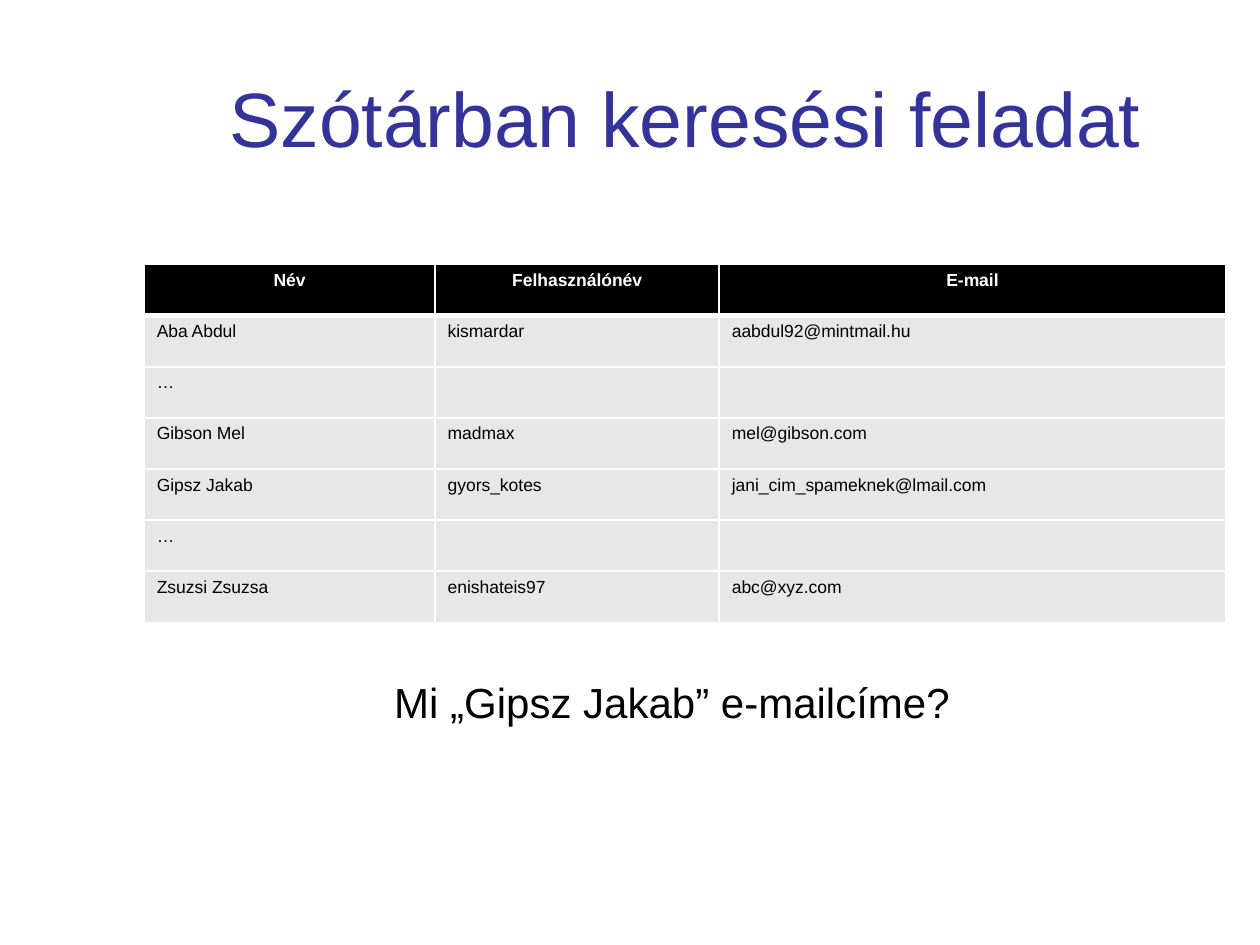
from dataclasses import dataclass

from lxml import etree
from pptx import Presentation
from pptx.dml.color import RGBColor
from pptx.enum import text as t
from pptx.oxml import ns
from pptx.util import Pt

FONT = "Arial"
WHITE, BLACK, GREY, BLUE = "FFFFFF", "000000", "E7E7E7", "333399"
LEFT, MID = t.PP_ALIGN.LEFT, t.PP_ALIGN.CENTER


@dataclass
class Label:
    words: str
    box: tuple[float, float, float, float]
    size: float
    color: str
    align: t.PP_ALIGN
    anchor: t.MSO_ANCHOR
    wrap: bool


LABELS = [
    Label("Szótárban keresési feladat", (99.4, 21.6, 584.6, 90),
          44, BLUE, MID, t.MSO_ANCHOR.MIDDLE, True),
    Label("Mi „Gipsz Jakab” e-mailcíme?", (218.2, 383, 335.5, 36),
          24, BLACK, LEFT, t.MSO_ANCHOR.TOP, False),
]

COLS = (166.2, 162.4, 289.4)
ROW = 29.2
ROWS = [
    ("Név", "Felhasználónév", "E-mail"),
    ("Aba Abdul", "kismardar", "aabdul92@mintmail.hu"),
    ("…", "", ""),
    ("Gibson Mel", "madmax", "mel@gibson.com"),
    ("Gipsz Jakab", "gyors_kotes", "jani_cim_spameknek@lmail.com"),
    ("…", "", ""),
    ("Zsuzsi Zsuzsa", "enishateis97", "abc@xyz.com"),
]


def rgb(code: str) -> RGBColor:
    return RGBColor.from_string(code)


def write(frame, words: str, size: float, color: str,
          align: t.PP_ALIGN, bold: bool = False) -> None:
    para = frame.paragraphs[0]
    para.alignment = align
    run = para.add_run()
    run.text = words
    font = run.font
    font.name, font.size, font.bold = FONT, Pt(size), bold
    font.color.rgb = rgb(color)


def add_label(slide, label: Label) -> None:
    shape = slide.shapes.add_textbox(*map(Pt, label.box))
    frame = shape.text_frame
    frame.word_wrap = label.wrap
    frame.vertical_anchor = label.anchor
    if not label.wrap:
        frame.auto_size = t.MSO_AUTO_SIZE.SHAPE_TO_FIT_TEXT
    write(frame, label.words, label.size, label.color, label.align)


def add_edge(cell, side: str, width: float) -> None:
    props = cell._tc.get_or_add_tcPr()
    line = etree.SubElement(props, ns.qn(f"a:ln{side}"), w=str(Pt(width)))
    fill = etree.SubElement(line, ns.qn("a:solidFill"))
    etree.SubElement(fill, ns.qn("a:srgbClr"), val=WHITE)


def add_grid(slide, left: float, top: float) -> None:
    frame = slide.shapes.add_table(
        len(ROWS), len(COLS), Pt(left), Pt(top),
        Pt(sum(COLS)), Pt(ROW * len(ROWS)))
    table = frame.table
    for col, width in zip(table.columns, COLS):
        col.width = Pt(width)
    for i, words in enumerate(ROWS):
        table.rows[i].height = Pt(ROW)
        head = i == 0
        # The line under the header is thicker
        edges = {"L": 1, "R": 1, "T": 3 if i == 1 else 1, "B": 3 if head else 1}
        for j, word in enumerate(words):
            cell = table.cell(i, j)
            for side, width in edges.items():
                add_edge(cell, side, width)
            cell.fill.solid()
            cell.fill.fore_color.rgb = rgb(BLACK if head else GREY)
            if word:
                write(cell.text_frame, word, 10, WHITE if head else BLACK,
                      MID if head else LEFT, head)


def main() -> None:
    deck = Presentation()
    deck.slide_width, deck.slide_height = Pt(720), Pt(540)
    slide = deck.slides.add_slide(deck.slide_layouts[6])

    # Directory table
    add_grid(slide, 82.4, 151.2)

    # Title and question
    for label in LABELS:
        add_label(slide, label)

    deck.save("out.pptx")


if __name__ == "__main__":
    main()
